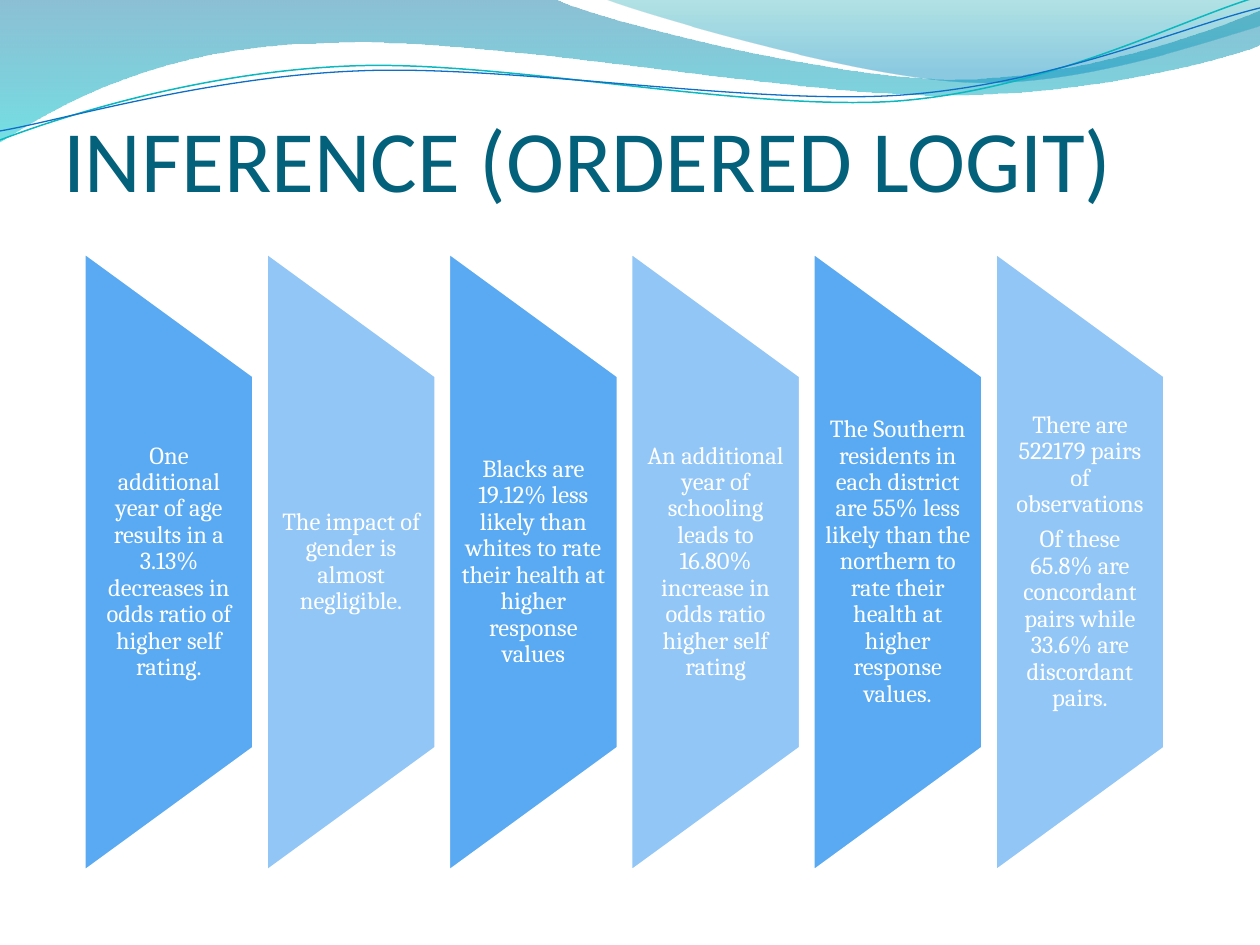
from dataclasses import dataclass

from lxml import etree
from pptx import Presentation, util as u
from pptx.dml.color import RGBColor
from pptx.enum import shapes, text
from pptx.oxml.ns import qn

PX = 914400 / 126  # EMU in one px


@dataclass(frozen=True)
class Theme:
    title: str = "04617B"
    white: str = "FFFFFF"
    strips: tuple = ("59AAF2", "91C6F7")
    # gradient stops: position, colour, opacity in percent
    wide_wave: tuple = ((0, "0074A1", 45), (1, "00C6CF", 55))
    small_wave: tuple = ((0, "00A1A9", 30), (0.8, "008BBF", 45))
    teal_line: str = "0AB8BF"
    blue_line: str = "0F6FC6"
    title_font: str = "Calibri"
    body_font: str = "Cambria"
    title_size: int = 50
    body_size: int = 14


T = Theme()

STRIPS = [
    ["One additional year of age results in a 3.13% decreases in odds ratio of higher self rating."],
    ["The impact of gender is almost negligible."],
    ["Blacks are 19.12% less likely than whites to rate their health at higher response values"],
    ["An additional year of schooling leads to 16.80% increase in odds ratio higher self rating"],
    ["The Southern residents in each district are 55% less likely than the northern to rate "
     "their health at higher response values."],
    ["There are 522179 pairs of observations",
     "Of these 65.8% are concordant pairs while 33.6% are discordant pairs."],
]

# Header outlines: a start point, then lines (2 numbers) and Bezier curves (6 numbers)
WIDE_WAVE = [(0, 0), (554, -1), (600, 21, 837, 79, 955, 79), (1075, 79, 1207, 33, 1260, 11),
             (1261, 45), (1239, 55, 1096, 96, 940, 95), (784, 95, 481, 35, 324, 43),
             (163, 45, 58, 105, -1, 142)]
SMALL_WAVE = [(604, -1), (641, 14, 859, 78, 969, 82), (1079, 87, 1211, 40, 1260, 26), (1260, 0)]
TEAL_CURVE = [(0, 140), (60, 117, 199, 72, 349, 66), (498, 59, 747, 112, 898, 101),
              (1050, 89, 1182, 19, 1257, -3)]
BLUE_CURVE = [(0, 131), (59, 121, 207, 77, 357, 71), (508, 64, 752, 106, 903, 95),
              (1053, 84, 1185, 26, 1260, 8)]


def px(n):
    return u.Emu(round(n * PX))


def rgb(value):
    return RGBColor.from_string(value)


def style_runs(p, font, size, color):
    for r in p.runs:
        r.font.name, r.font.size = font, u.Pt(size)
        r.font.color.rgb = rgb(color)


def set_frame(tf, anchor, left=0, top=0, right=0, bottom=0):
    tf.word_wrap = True
    tf.auto_size = text.MSO_AUTO_SIZE.NONE
    tf.vertical_anchor = anchor
    tf.margin_left, tf.margin_top = u.Inches(left), u.Inches(top)
    tf.margin_right, tf.margin_bottom = u.Inches(right), u.Inches(bottom)


def add_outline(s, box, outline, close):
    x, y = box[:2]
    pts = [(px(x + seg[i]), px(y + seg[i + 1])) for seg in outline for i in range(0, len(seg), 2)]
    fb = s.shapes.build_freeform(*pts[0])
    fb.add_line_segments(pts[1:], close=close)
    sp = fb.convert_to_shape()
    sp.shadow.inherit = False

    # Join each three points of a curve into one Bezier segment
    steps = iter(list(sp._element.iter(qn("a:lnTo"))))
    for seg in outline[1:]:
        first = next(steps)
        if len(seg) == 6:
            first.tag = qn("a:cubicBezTo")
            for _ in range(2):
                step = next(steps)
                first.append(step[0])
                step.getparent().remove(step)
    return sp


def add_header(s, box):
    # Translucent waves
    for outline, stops in ((WIDE_WAVE, T.wide_wave), (SMALL_WAVE, T.small_wave)):
        sp = add_outline(s, box, outline, True)
        sp.line.fill.background()
        sp.fill.gradient()
        sp.fill.gradient_angle = 270
        for stop, (pos, color, _) in zip(sp.fill.gradient_stops, stops):
            stop.position = pos
            stop.color.rgb = rgb(color)
        colors = sp._element.spPr.iter(qn("a:srgbClr"))
        for clr, (_, _, opacity) in zip(colors, stops):
            etree.SubElement(clr, qn("a:alpha")).set("val", str(opacity * 1000))

    # Thin curves
    for outline, color, width in ((TEAL_CURVE, T.teal_line, 0.85),
                                  (BLUE_CURVE, T.blue_line, 0.75)):
        sp = add_outline(s, box, outline, False)
        sp.fill.background()
        sp.line.color.rgb = rgb(color)
        sp.line.width = u.Pt(width)


def add_title(s, box, wording):
    sp = s.shapes.title
    sp.left, sp.top, sp.width, sp.height = map(px, box)
    tf = sp.text_frame
    tf.text = wording
    set_frame(tf, text.MSO_ANCHOR.BOTTOM, top=0.05)
    p = tf.paragraphs[0]
    p.alignment = text.PP_ALIGN.LEFT
    style_runs(p, T.title_font, T.title_size, T.title)


def add_strip(s, box, paragraphs, color):
    x, y, w, h = box
    # Trapezoid turned on its side, around the centre of the box
    sp = s.shapes.add_shape(shapes.MSO_SHAPE.FLOWCHART_MANUAL_OPERATION,
                            px(x + (w - h) / 2), px(y + (h - w) / 2), px(h), px(w))
    sp.rotation = 270
    sp.shadow.inherit = False
    sp.fill.solid()
    sp.fill.fore_color.rgb = rgb(color)
    sp.line.color.rgb = rgb(T.white)
    sp.line.width = u.Pt(2)

    # Upright text in the middle three fifths
    tf = s.shapes.add_textbox(px(x), px(y + h / 5), px(w), px(h * 3 / 5)).text_frame
    tf.text = "\n".join(paragraphs)
    set_frame(tf, text.MSO_ANCHOR.MIDDLE, left=0.1, right=0.1)
    for p in tf.paragraphs:
        p.alignment = text.PP_ALIGN.CENTER
        p.line_spacing = 0.9
        p.space_after = u.Pt(5)
        style_runs(p, T.body_font, T.body_size, T.white)


def add_strips(s, box, items, width=170):
    x, y, w, h = box
    pitch = (w - width) / (len(items) - 1)
    for i, paragraphs in enumerate(items):
        add_strip(s, (x + i * pitch, y, width, h), paragraphs, T.strips[i % 2])


def main():
    prs = Presentation()
    prs.slide_width, prs.slide_height = px(1260), px(945)
    s = prs.slides.add_slide(prs.slide_layouts[5])
    add_header(s, (0, 0, 1260, 142))
    add_title(s, (63, 52, 1134, 158), "INFERENCE (ORDERED LOGIT)")
    add_strips(s, (84, 252, 1081, 620), STRIPS)
    prs.save("out.pptx")


if __name__ == "__main__":
    main()
